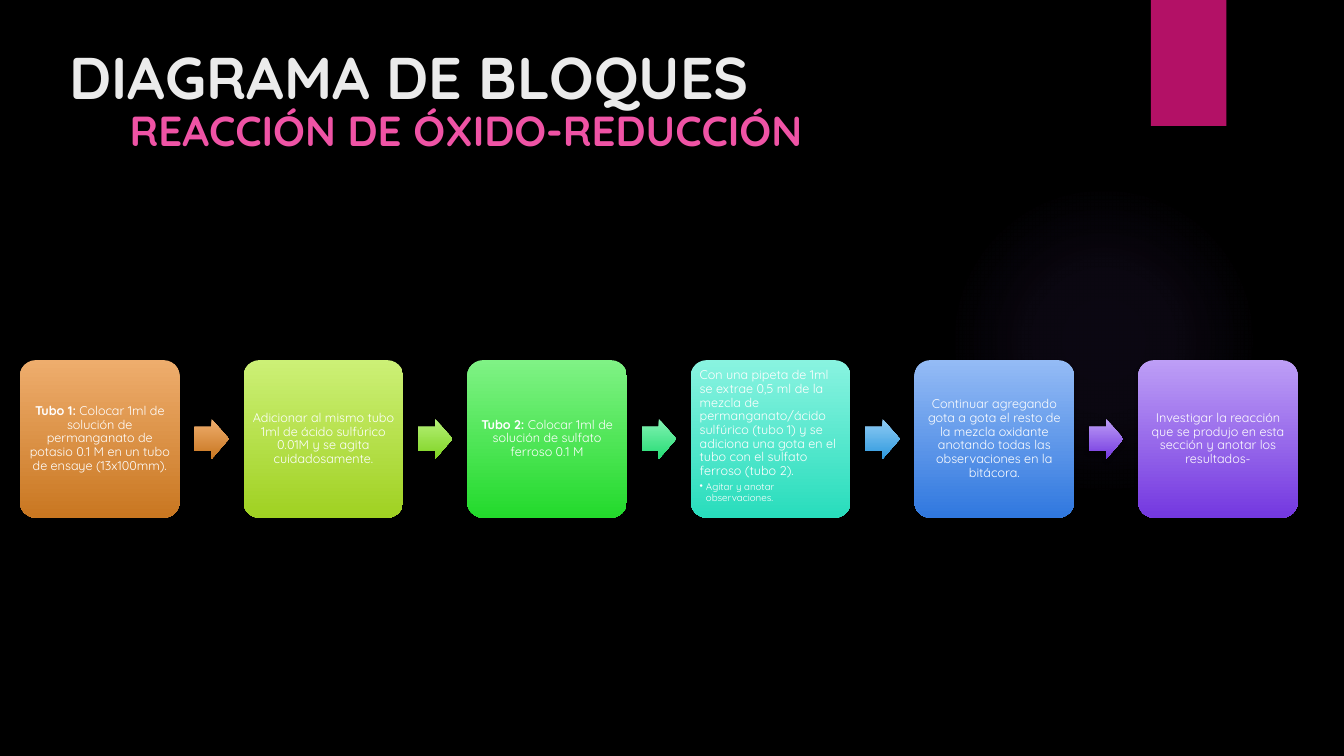
from lxml import etree
from pptx import Presentation
from pptx.dml.color import RGBColor
from pptx.enum.shapes import MSO_SHAPE
from pptx.enum.text import MSO_ANCHOR, PP_ALIGN
from pptx.oxml import parse_xml
from pptx.oxml.ns import qn
from pptx.util import Pt

PX = 9525  # EMU in one px, 96 px to the inch
FONT = "Quicksand"
NS = 'xmlns:a="http://schemas.openxmlformats.org/drawingml/2006/main"'

OVAL, RECT = MSO_SHAPE.OVAL, MSO_SHAPE.RECTANGLE
ROUND, ARROW = MSO_SHAPE.ROUNDED_RECTANGLE, MSO_SHAPE.RIGHT_ARROW
TOP, MIDDLE, BOTTOM = MSO_ANCHOR.TOP, MSO_ANCHOR.MIDDLE, MSO_ANCHOR.BOTTOM
LEFT, CENTER = PP_ALIGN.LEFT, PP_ALIGN.CENTER

BLACK = RGBColor(0x00, 0x00, 0x00)
WHITE = RGBColor(0xFF, 0xFF, 0xFF)
PALE = RGBColor(0xEB, 0xEB, 0xEB)
PINK = RGBColor(0xEF, 0x53, 0xA5)
MAGENTA = RGBColor(0xB3, 0x11, 0x66)
LILAC = RGBColor(0x9B, 0x6B, 0xF2)
ORANGE = RGBColor(0xEE, 0xAD, 0x6D), RGBColor(0xC9, 0x77, 0x21)
LIME = RGBColor(0xCC, 0xF0, 0x76), RGBColor(0xA0, 0xD1, 0x22)
LEAF = RGBColor(0xB5, 0xF0, 0x78), RGBColor(0x7F, 0xD3, 0x22)
GREEN = RGBColor(0x7F, 0xF2, 0x85), RGBColor(0x23, 0xDA, 0x2C)
MINT = RGBColor(0x84, 0xF2, 0xB3), RGBColor(0x24, 0xDC, 0x74)
TEAL = RGBColor(0x89, 0xF3, 0xE0), RGBColor(0x28, 0xDD, 0xBC)
SKY = RGBColor(0x91, 0xCC, 0xF4), RGBColor(0x2E, 0x99, 0xDE)
BLUE = RGBColor(0x94, 0xBB, 0xF5), RGBColor(0x30, 0x78, 0xDF)
VIOLET = RGBColor(0xBD, 0x9E, 0xF6), RGBColor(0x74, 0x38, 0xE0)

# Card colours, arrow colours, bold lead, text, sub-point
STEPS = [
    (ORANGE, ORANGE, "Tubo 1: ", "Colocar 1ml de solución de permanganato de "
     "potasio 0.1 M en un tubo de ensaye (13x100mm).", ""),
    (LIME, LEAF, "", "Adicionar al mismo tubo 1ml de ácido sulfúrico 0.01M "
     "y se agita cuidadosamente.", ""),
    (GREEN, MINT, "Tubo 2: ",
     "Colocar 1ml de solución de sulfato ferroso 0.1 M", ""),
    (TEAL, SKY, "", "Con una pipeta de 1ml se extrae 0,5 ml de la mezcla de "
     "permanganato/ácido sulfúrico (tubo 1) y se adiciona una gota en el tubo "
     "con el sulfato ferroso (tubo 2).", "Agitar y anotar observaciones."),
    (BLUE, VIOLET, "", "Continuar agregando gota a gota el resto de la mezcla "
     "oxidante anotando todas las observaciones en la bitácora.", ""),
    (VIOLET, None, "", "Investigar la reacción que se produjo en esta sección "
     "y anotar los resultados-", ""),
]


def put(obj, **vals):
    for key, val in vals.items():
        setattr(obj, key, val)


def write(para, text, size, color, bold=False):
    run = para.add_run()
    run.text = text
    put(run.font, name=FONT, size=Pt(size), bold=bold)
    run.font.color.rgb = color


def shape(slide, kind, box, fill=None, shade=True):
    """Add a shape without a line; a pair of colours fills it top to bottom."""
    item = slide.shapes.add_shape(kind, *(n * PX for n in box))
    item.line.fill.background()
    if isinstance(fill, RGBColor):
        item.fill.solid()
        item.fill.fore_color.rgb = fill
    elif fill:
        item.fill.gradient()
        item.fill.gradient_angle = 270
        for stop, color in zip(item.fill.gradient_stops, fill):
            stop.color.rgb = color
    item.shadow.inherit = False
    if shade:
        item._element.spPr.find(qn("a:effectLst")).append(parse_xml(
            f'<a:outerShdw {NS} blurRad="{Pt(3)}" dist="{Pt(2)}" dir="5400000"'
            f' rotWithShape="0"><a:srgbClr val="{BLACK}">'
            '<a:alpha val="45000"/></a:srgbClr></a:outerShdw>'))
    return item


def glow(slide, box):
    """Faint round light that fades outward."""
    item = shape(slide, OVAL, box, shade=False)
    stops = "".join(
        f'<a:gs pos="{pos * 1000}"><a:srgbClr val="{LILAC}">'
        f'<a:alpha val="{alpha * 1000}"/></a:srgbClr></a:gs>'
        for pos, alpha in ((0, 7), (36, 6), (69, 0)))
    item.fill.gradient()
    props = item._element.spPr
    props.replace(props.find(qn("a:gradFill")), parse_xml(
        f'<a:gradFill {NS}><a:gsLst>{stops}</a:gsLst><a:path path="circle">'
        '<a:fillToRect l="50000" t="50000" r="50000" b="50000"/>'
        '</a:path></a:gradFill>'))


def heading(slide, box, text, size, color, anchor):
    frame = slide.shapes.add_textbox(*(n * PX for n in box)).text_frame
    put(frame, word_wrap=True, vertical_anchor=anchor)
    write(frame.paragraphs[0], text, size, color, True)


def bullet(para, indent):
    props = para._p.get_or_add_pPr()
    props.set("marL", str(indent * PX))
    props.set("indent", str(-indent * PX))
    etree.SubElement(props, qn("a:buChar")).set("char", "•")


def card(slide, box, fill, lead, text, point):
    item = shape(slide, ROUND, box, fill)
    item.adjustments[0] = 0.1
    frame = item.text_frame
    put(frame, word_wrap=True, vertical_anchor=TOP if point else MIDDLE)
    for side in ("left", "top", "right", "bottom"):
        setattr(frame, f"margin_{side}", 4 * PX)
    para = frame.paragraphs[0]
    put(para, alignment=LEFT if point else CENTER,
        line_spacing=0.9, space_after=Pt(3))
    if lead:
        write(para, lead, 9, WHITE, True)
    write(para, text, 9, WHITE)
    if point:
        para = frame.add_paragraph()
        put(para, alignment=LEFT, line_spacing=0.9, space_after=Pt(1))
        bullet(para, 6)
        write(para, point, 7, WHITE)


def flow(slide, box):
    """Row of equal cards with an arrow in each gap."""
    left, top, width, high = box
    wide, long, tall = 152, 33, 38
    pitch = (width - wide) // (len(STEPS) - 1)
    for i, (fill, tint, *words) in enumerate(STEPS):
        x = left + i * pitch
        card(slide, (x, top, wide, high), fill, *words)
        if tint:
            gap = (pitch - wide - long) // 2
            spot = (x + wide + gap, top + (high - tall) // 2, long, tall)
            arrow = shape(slide, ARROW, spot, tint)
            arrow.adjustments[0] = 0.6
            arrow.adjustments[1] = 0.5


def main():
    deck = Presentation()
    put(deck, slide_width=1280 * PX, slide_height=720 * PX)
    slide = deck.slides.add_slide(deck.slide_layouts[6])
    slide.background.fill.solid()
    slide.background.fill.fore_color.rgb = BLACK

    # Backdrop
    glow(slide, (903, 176, 296, 296))
    shape(slide, RECT, (1096, 0, 72, 120), MAGENTA)

    # Headings
    heading(slide, (57, 34, 988, 147), "DIAGRAMA DE BLOQUES", 42, PALE, TOP)
    heading(slide, (114, 92, 990, 60), "REACCIÓN DE ÓXIDO-REDUCCIÓN",
            30, PINK, BOTTOM)

    # Process
    flow(slide, (19, 343, 1217, 150))
    deck.save("out.pptx")


if __name__ == "__main__":
    main()
